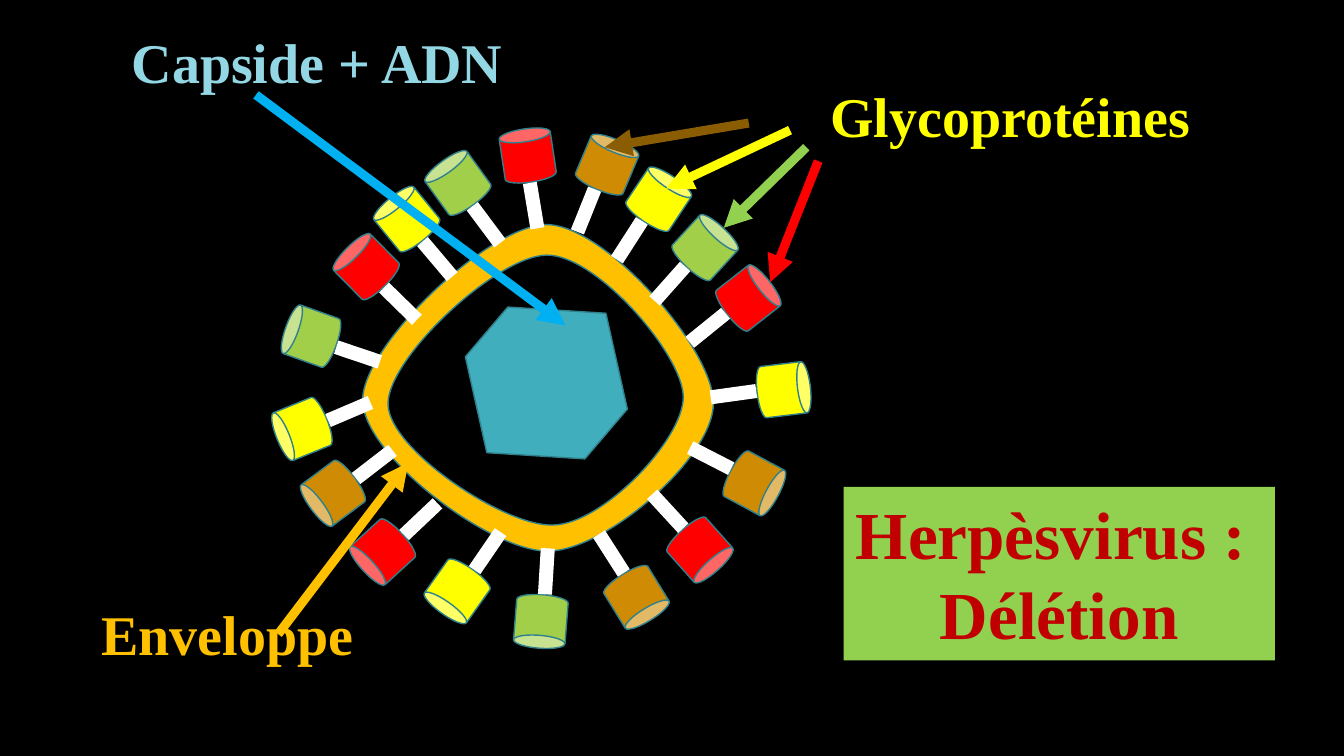
from dataclasses import dataclass
from math import cos, radians, sin

from lxml.etree import SubElement
from pptx import Presentation
from pptx.dml.color import RGBColor
from pptx.enum.shapes import MSO_CONNECTOR, MSO_SHAPE
from pptx.enum.text import MSO_ANCHOR, MSO_AUTO_SIZE, PP_ALIGN
from pptx.oxml.ns import qn
from pptx.util import Cm, Pt

FONT = "Times New Roman"
OUTLINE = "30818C"
RED, LIME, YELLOW, BROWN = "FF0000", "A2CF49", "FFFF00", "CF8B03"
GOLD, GREEN = "FFC000", "92D050"
CAN_WIDTH, CAN_HEIGHT = 1.3, 1.35

Point = tuple[float, float]


@dataclass
class Spike:
    """A glycoprotein: centre of its can, clockwise rotation and colour."""
    x: float
    y: float
    angle: float
    color: str


@dataclass
class Arrow:
    start: Point
    end: Point
    color: str


@dataclass
class Label:
    text: str
    left: float
    top: float
    color: str


SPIKES = [
    Spike(17.64, 13.86, 138.4, RED),
    Spike(9.64, 13.91, 227.6, RED),
    Spike(9.23, 6.72, 315.4, RED),
    Spike(18.86, 7.51, 52, RED),
    Spike(13.3, 3.92, 351.5, RED),
    Spike(7.84, 8.47, 289.6, LIME),
    Spike(11.52, 14.9, 215.4, YELLOW),
    Spike(8.39, 12.43, 233.3, BROWN),
    Spike(13.63, 15.66, 184.5, LIME),
    Spike(17.77, 6.24, 42.6, LIME),
    Spike(11.54, 4.61, 324.2, LIME),
    Spike(19.75, 9.82, 83.1, YELLOW),
    Spike(16.6, 5.02, 33.7, YELLOW),
    Spike(10.25, 5.52, 320.8, YELLOW),
    Spike(16.04, 15.05, 148.4, BROWN),
    Spike(19.01, 12.18, 118.2, BROWN),
    Spike(15.3, 4.15, 22.9, BROWN),
    Spike(7.61, 10.81, 247.9, YELLOW),
]

LABELS = [
    Label("Capside + ADN", 3.07, 0.56, "94D7E4"),
    Label("Enveloppe", 2.31, 14.99, GOLD),
    Label("Glycoprotéines", 20.68, 1.93, YELLOW),
]

ARROWS = [
    Arrow((19.91, 3.28), (16.79, 4.75), YELLOW),
    Arrow((20.32, 3.71), (18.24, 5.74), GREEN),
    Arrow((20.62, 4.06), (19.41, 7.11), RED),
    Arrow((18.87, 3.1), (15.24, 3.71), "8A5D02"),
    Arrow((6.45, 2.39), (14.25, 8.2), "00B0F0"),
    Arrow((7.01, 15.98), (10.29, 11.66), GOLD),
]

# Each contour: a start point, then two control points and an end per curve.
ENVELOPE_OUTER = [
    (9.14, 10.08),
    (9.14, 8.71), (12.32, 5.66), (13.79, 5.66),
    (15.27, 5.69), (17.98, 8.79), (17.98, 10.16),
    (17.98, 11.53), (15.27, 13.89), (13.79, 13.89),
    (12.32, 13.87), (9.14, 11.46), (9.14, 10.08),
]
ENVELOPE_INNER = [
    (9.78, 10.19),
    (9.8, 11.33), (12.73, 13.28), (13.94, 13.23),
    (15.19, 13.21), (17.22, 11.07), (17.22, 10.01),
    (17.22, 8.94), (15.01, 6.4), (13.77, 6.43),
    (12.52, 6.45), (9.75, 9.04), (9.78, 10.19),
]


def rgb(color: str) -> RGBColor:
    return RGBColor.from_string(color)


def paint(shape, fill: str, line: str | None = OUTLINE) -> None:
    shape.shadow.inherit = False
    shape.fill.solid()
    shape.fill.fore_color.rgb = rgb(fill)
    if line is None:
        shape.line.fill.background()
    else:
        shape.line.color.rgb = rgb(line)
        shape.line.width = Pt(1)


def add_line(shapes, start: Point, end: Point, color: str, width: float):
    line = shapes.add_connector(
        MSO_CONNECTOR.STRAIGHT, *(Cm(value) for value in (*start, *end)))
    line.line.color.rgb = rgb(color)
    line.line.width = Pt(width)
    SubElement(line._element.spPr, qn("a:effectLst"))
    return line


def add_arrow(page, arrow: Arrow) -> None:
    line = add_line(page.shapes, arrow.start, arrow.end, arrow.color, 6.5)
    SubElement(line.line._get_or_add_ln(), qn("a:tailEnd"), type="triangle")


def add_spike(page, spike: Spike) -> None:
    group = page.shapes.add_group_shape()
    can = group.shapes.add_shape(
        MSO_SHAPE.CAN, Cm(spike.x - CAN_WIDTH / 2), Cm(spike.y - CAN_HEIGHT / 2),
        Cm(CAN_WIDTH), Cm(CAN_HEIGHT))
    can.rotation = spike.angle
    paint(can, spike.color)
    turn = radians(spike.angle)

    def stalk_point(across: float, down: float) -> Point:
        """Turn an offset from the can's centre along with the can."""
        return (spike.x + across * cos(turn) - down * sin(turn),
                spike.y + across * sin(turn) + down * cos(turn))

    add_line(group.shapes, stalk_point(-0.05, 0.69), stalk_point(-0.03, 1.85),
             "FFFFFF", 10)


def bend(shape) -> None:
    """Turn every three straight segments of a freeform into one cubic curve."""
    segments = list(shape._element.iter(qn("a:lnTo")))
    for first in range(0, len(segments), 3):
        curve, *others = segments[first:first + 3]
        for segment in others:
            curve.append(segment[0])
            segment.getparent().remove(segment)
        curve.tag = qn("a:cubicBezTo")


def add_envelope(page) -> None:
    outer, inner = ([(Cm(x), Cm(y)) for x, y in contour]
                    for contour in (ENVELOPE_OUTER, ENVELOPE_INNER))
    builder = page.shapes.build_freeform(*outer[0])
    builder.add_line_segments(outer[1:], close=True)
    builder.move_to(*inner[0])
    builder.add_line_segments(inner[1:], close=True)
    envelope = builder.convert_to_shape()
    bend(envelope)
    paint(envelope, GOLD)


def add_span(para, text: str, size: float, color: str) -> None:
    span = para.add_run()
    span.text = text
    span.font.name = FONT
    span.font.size = Pt(size)
    span.font.bold = True
    span.font.color.rgb = rgb(color)


def add_label(page, label: Label) -> None:
    box = page.shapes.add_textbox(
        Cm(label.left), Cm(label.top), Cm(10.59), Cm(1.98))
    box.text_frame.word_wrap = True
    box.text_frame.auto_size = MSO_AUTO_SIZE.SHAPE_TO_FIT_TEXT
    add_span(box.text_frame.paragraphs[0], label.text, 40, label.color)


def add_title(page) -> None:
    box = page.shapes.add_shape(
        MSO_SHAPE.RECTANGLE, Cm(21.26), Cm(12.27), Cm(10.87), Cm(4.37))
    paint(box, GREEN, None)
    frame = box.text_frame
    frame.word_wrap = False
    frame.auto_size = MSO_AUTO_SIZE.SHAPE_TO_FIT_TEXT
    frame.vertical_anchor = MSO_ANCHOR.TOP
    for index, text in enumerate(("Herpèsvirus : ", "Délétion")):
        para = frame.add_paragraph() if index else frame.paragraphs[0]
        para.alignment = PP_ALIGN.CENTER
        add_span(para, text, 48, "C00000")


def main() -> None:
    deck = Presentation()
    deck.slide_width, deck.slide_height = Cm(33.87), Cm(19.05)
    page = deck.slides.add_slide(deck.slide_layouts[6])
    page.background.fill.solid()
    page.background.fill.fore_color.rgb = rgb("000000")
    capsid = page.shapes.add_shape(
        MSO_SHAPE.HEXAGON, Cm(11.46), Cm(7.67), Cm(4.62), Cm(3.96))
    capsid.adjustments[0] = 0.375
    capsid.rotation = 310.5
    paint(capsid, "41AEBD")
    add_envelope(page)
    for spike in SPIKES:
        add_spike(page, spike)
    for label in LABELS:
        add_label(page, label)
    for arrow in ARROWS:
        add_arrow(page, arrow)
    add_title(page)
    deck.save("out.pptx")


if __name__ == "__main__":
    main()
